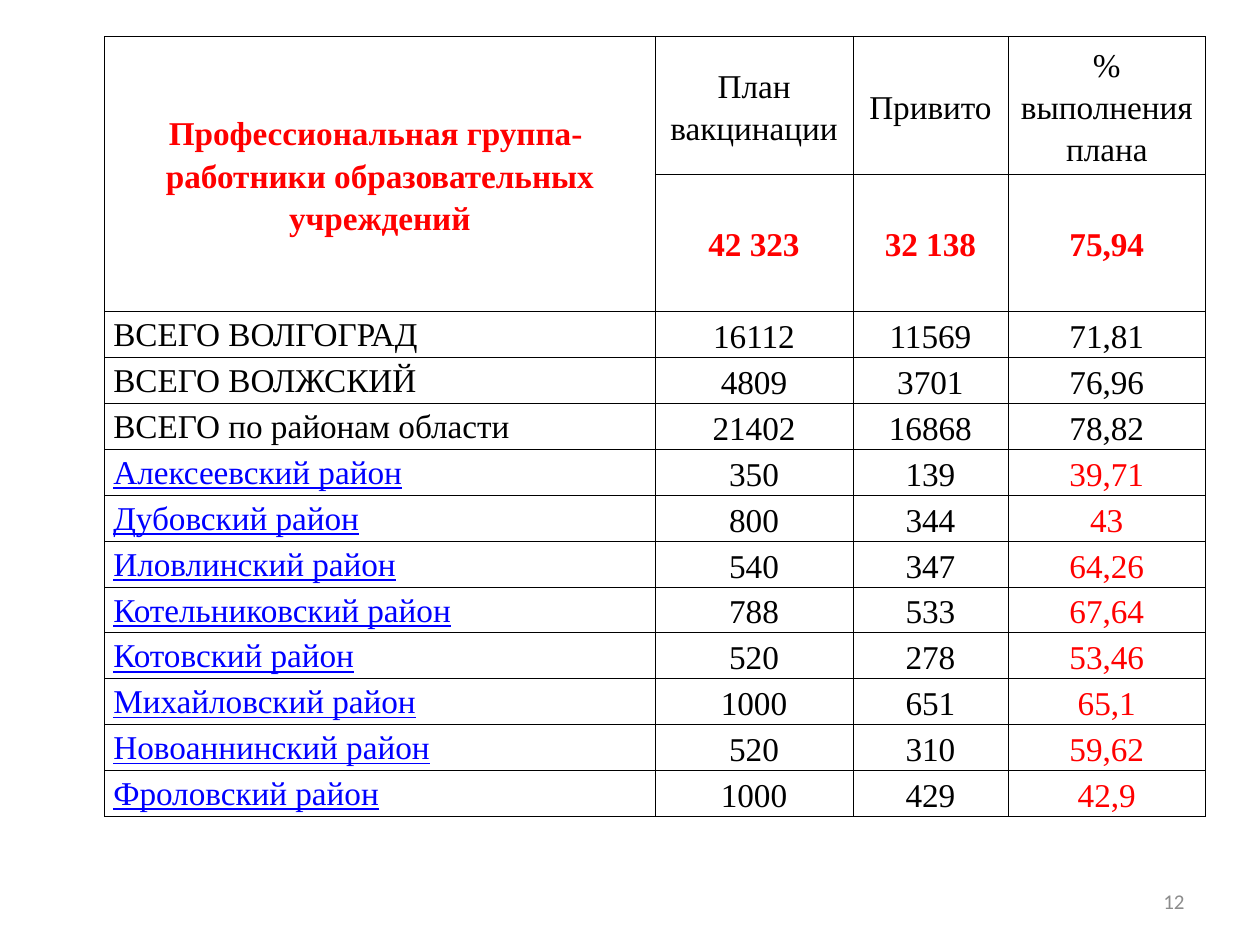
from dataclasses import dataclass

from lxml import etree
from pptx import Presentation
from pptx.dml.color import RGBColor
from pptx.enum.text import MSO_ANCHOR, PP_ALIGN
from pptx.oxml.ns import qn
from pptx.util import Inches, Pt

LEFT, CENTER, RIGHT = PP_ALIGN.LEFT, PP_ALIGN.CENTER, PP_ALIGN.RIGHT
TOP, MIDDLE = MSO_ANCHOR.TOP, MSO_ANCHOR.MIDDLE

BLACK = RGBColor(0x00, 0x00, 0x00)
RED = RGBColor(0xFF, 0x00, 0x00)
BLUE = RGBColor(0x00, 0x00, 0xFF)
GRAY = RGBColor(0x8C, 0x8C, 0x8C)

COL_WIDTHS = (4.37, 1.57, 1.23, 1.57)
HEADER_HEIGHT, ROW_HEIGHT = 1.07, 0.36
FIRST_DATA_ROW = 2


@dataclass(frozen=True)
class Style:
    color: RGBColor = BLACK
    bold: bool = False
    underline: bool = False
    align: PP_ALIGN = CENTER
    anchor: MSO_ANCHOR = MIDDLE
    space_after: int = 0


@dataclass(frozen=True)
class Area:
    name: str
    plan: str
    done: str
    percent: str
    district: bool = True


HEADER = Style()
TOTAL = Style(RED, bold=True)
AREA_NAME = Style(align=LEFT, anchor=TOP)
DISTRICT_NAME = Style(BLUE, underline=True, align=LEFT, anchor=TOP)
NUMBER = Style(space_after=10)
LOW_NUMBER = Style(RED, space_after=10)

TITLE = ("Профессиональная группа- ", "работники образовательных учреждений")
HEADINGS = ("План вакцинации", "Привито", "% выполнения плана")
TOTALS = ("42 323", "32 138", "75,94")
AREAS = (
    Area("ВСЕГО ВОЛГОГРАД", "16112", "11569", "71,81", False),
    Area("ВСЕГО ВОЛЖСКИЙ", "4809", "3701", "76,96", False),
    Area("ВСЕГО по районам области", "21402", "16868", "78,82", False),
    Area("Алексеевский район", "350", "139", "39,71"),
    Area("Дубовский район", "800", "344", "43"),
    Area("Иловлинский район", "540", "347", "64,26"),
    Area("Котельниковский район", "788", "533", "67,64"),
    Area("Котовский район", "520", "278", "53,46"),
    Area("Михайловский район", "1000", "651", "65,1"),
    Area("Новоаннинский район", "520", "310", "59,62"),
    Area("Фроловский район", "1000", "429", "42,9"),
)


def add_run(p, text: str, font: str, size: int, color: RGBColor):
    r = p.add_run()
    r.text = text
    r.font.name = font
    r.font.size = Pt(size)
    r.font.color.rgb = color
    return r


def format_cell(cell) -> None:
    tcPr = cell._tc.get_or_add_tcPr()
    for side in ("lnL", "lnR", "lnT", "lnB"):
        ln = etree.SubElement(tcPr, qn(f"a:{side}"), w=str(Pt(0.5)))
        fill = etree.SubElement(ln, qn("a:solidFill"))
        etree.SubElement(fill, qn("a:srgbClr"), val=str(BLACK))
    cell.fill.background()
    cell.margin_left = cell.margin_right = Inches(0.07)
    cell.margin_top = cell.margin_bottom = 0


def fill_cell(cell, style: Style, *lines: str) -> None:
    cell.vertical_anchor = style.anchor
    tf = cell.text_frame
    for i, line in enumerate(lines):
        p = tf.add_paragraph() if i else tf.paragraphs[0]
        p.alignment = style.align
        p.line_spacing = 1.15
        p.space_after = Pt(style.space_after)
        r = add_run(p, line, "Times New Roman", 19, style.color)
        r.font.bold = style.bold
        r.font.underline = style.underline


def add_vaccination_table(s) -> None:
    n_rows = FIRST_DATA_ROW + len(AREAS)
    height = HEADER_HEIGHT + ROW_HEIGHT * (n_rows - 1)
    table = s.shapes.add_table(
        n_rows, len(COL_WIDTHS), Inches(0.83), Inches(0.29),
        Inches(sum(COL_WIDTHS)), Inches(height)).table
    table.first_row = table.horz_banding = False
    for col, width in zip(table.columns, COL_WIDTHS):
        col.width = Inches(width)
    for i, row in enumerate(table.rows):
        row.height = Inches(ROW_HEIGHT if i else HEADER_HEIGHT)
    for cell in table.iter_cells():
        format_cell(cell)

    table.cell(0, 0).merge(table.cell(1, 0))
    fill_cell(table.cell(0, 0), TOTAL, *TITLE)
    for j, (heading, total) in enumerate(zip(HEADINGS, TOTALS), 1):
        fill_cell(table.cell(0, j), HEADER, heading)
        fill_cell(table.cell(1, j), TOTAL, total)
    for i, area in enumerate(AREAS, FIRST_DATA_ROW):
        name_style = DISTRICT_NAME if area.district else AREA_NAME
        percent_style = LOW_NUMBER if area.district else NUMBER
        fill_cell(table.cell(i, 0), name_style, area.name)
        fill_cell(table.cell(i, 1), NUMBER, area.plan)
        fill_cell(table.cell(i, 2), NUMBER, area.done)
        fill_cell(table.cell(i, 3), percent_style, area.percent)


def add_page_number(s, number: str) -> None:
    tf = s.shapes.add_textbox(
        Inches(7.17), Inches(6.95), Inches(2.33), Inches(0.4)).text_frame
    tf.word_wrap = True
    tf.vertical_anchor = MIDDLE
    p = tf.paragraphs[0]
    p.alignment = RIGHT
    add_run(p, number, "Calibri", 12, GRAY)


def main() -> None:
    prs = Presentation()
    prs.slide_width, prs.slide_height = Inches(10), Inches(7.5)
    s = prs.slides.add_slide(prs.slide_layouts[6])
    add_page_number(s, "12")
    add_vaccination_table(s)
    prs.save("out.pptx")


if __name__ == "__main__":
    main()
